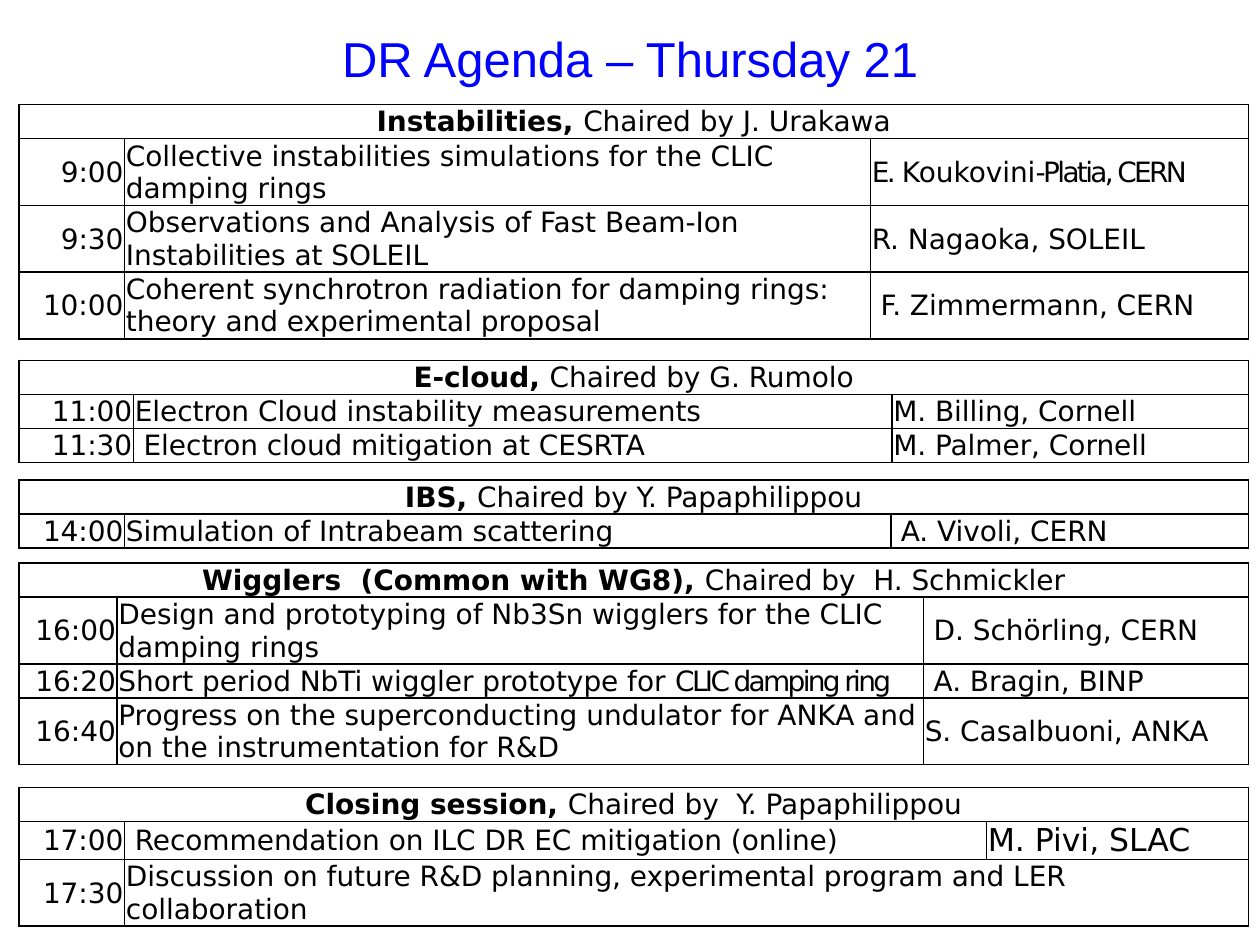
import pptx
import pptx.util
import pptx.dml.color
import pptx.enum.text
import pptx.oxml
import pptx.oxml.ns

Inch, Pt = pptx.util.Inches, pptx.util.Pt
Align = pptx.enum.text.PP_ALIGN
Middle = pptx.enum.text.MSO_ANCHOR.MIDDLE


def color(code):
    return pptx.dml.color.RGBColor.from_string(code)


def border(cell):
    """Draw a thin black line on all four sides; call before setting the fill."""
    props = cell._tc.get_or_add_tcPr()
    for side in ("lnL", "lnR", "lnT", "lnB"):
        props.append(pptx.oxml.parse_xml(
            f'<a:{side} {pptx.oxml.ns.nsdecls("a")} w="12700"><a:solidFill>'
            f'<a:srgbClr val="000000"/></a:solidFill></a:{side}>'))


# Each session: top, column widths, white fill, topic, chair, talks.
# A talk: time, title, speaker, lines of text. Text between ~ marks is tightly spaced.
agenda = [
    (0.83, (0.84, 5.92, 3), True, "Instabilities, ", "Chaired by J. Urakawa", [
        ("9:00", "Collective instabilities simulations for the CLIC damping rings",
         "~E. ~Koukovini~-Platia, CERN~", 2),
        ("9:30", "Observations and Analysis of Fast Beam-Ion Instabilities at SOLEIL",
         "R. Nagaoka, SOLEIL", 2),
        ("10:00", "Coherent synchrotron radiation for damping rings: "
         "theory and experimental proposal", " F. Zimmermann, CERN", 2)]),
    (2.86, (0.91, 6.02, 2.83), False, "E-cloud, ", "Chaired by G. Rumolo", [
        ("11:00", "Electron Cloud instability measurements", "M. Billing, Cornell", 1),
        ("11:30", " Electron cloud mitigation at CESRTA", "M. Palmer, Cornell", 1)]),
    (3.81, (0.84, 6.08, 2.84), False, "IBS, ", "Chaired by Y. Papaphilippou", [
        ("14:00", "Simulation of Intrabeam scattering", " A. Vivoli, CERN", 1)]),
    (4.47, (0.78, 6.4, 2.58), False, "Wigglers  (Common with WG8), ",
     "Chaired by  H. Schmickler", [
        ("16:00", "Design and prototyping of Nb3Sn wigglers for the CLIC damping rings",
         " D. Schörling, CERN", 2),
        ("16:20", "Short period NbTi wiggler prototype for ~CLIC damping ring~",
         " A. Bragin, BINP", 1),
        ("16:40", "Progress on the superconducting undulator for ANKA and "
         "on the instrumentation for R&D", "S. Casalbuoni, ANKA", 2)]),
    (6.25, (0.84, 6.84, 2.08), True, "Closing session, ", "Chaired by  Y. Papaphilippou", [
        ("17:00", " Recommendation on ILC DR EC mitigation (online)", "M. Pivi, SLAC", 1),
        ("17:30", "Discussion on future R&D planning, experimental program and LER "
         "collaboration", None, 2)]),
]
left, width, line = 0.15, 9.76, 0.26

deck = pptx.Presentation()
deck.slide_width, deck.slide_height = Inch(10), Inch(7.5)
slide = deck.slides.add_slide(deck.slide_layouts[5])

title = slide.shapes.title
title.left, title.top = 0, Inch(0.17)
title.width, title.height = deck.slide_width, Inch(0.58)
title.text_frame.text = "DR Agenda – Thursday 21"
title.text_frame.vertical_anchor = Middle
para = title.text_frame.paragraphs[0]
para.alignment = Align.CENTER
para.font.name, para.font.size = "Arial", Pt(28)
para.font.color.rgb = color("0000FF")

for top, cols, white, topic, chair, talks in agenda:
    highs = [line + 0.01] + [talk[3] * line + 0.01 for talk in talks]
    table = slide.shapes.add_table(len(highs), 3, Inch(left), Inch(top),
                                   Inch(width), Inch(sum(highs))).table
    table.first_row = table.horz_banding = False
    for col, wide in zip(table.columns, cols):
        col.width = Inch(wide)
    for row, high in zip(table.rows, highs):
        row.height = Inch(high)

    for cell in table.iter_cells():
        border(cell)
        if white:
            cell.fill.solid()
            cell.fill.fore_color.rgb = color("FFFFFF")
        else:
            cell.fill.background()
        cell.margin_left = cell.margin_right = cell.margin_top = Inch(0.01)
        cell.margin_bottom = 0
        cell.vertical_anchor = Middle

    head = table.cell(0, 0)
    head.merge(table.cell(0, 2))
    para = head.text_frame.paragraphs[0]
    for text, bold in ((topic, True), (chair, False)):
        run = para.add_run()
        run.text, run.font.bold = text, bold
    para.alignment = Align.CENTER
    para.font.name, para.font.size = "DejaVu Sans", Pt(16)
    para.font.color.rgb = color("000000")

    for r, talk in enumerate(talks, 1):
        for c, text in enumerate(talk[:3]):
            if text is None:
                table.cell(r, c - 1).merge(table.cell(r, c))
                continue
            para = table.cell(r, c).text_frame.paragraphs[0]
            for n, part in enumerate(text.split("~")):
                if part:
                    run = para.add_run()
                    run.text = part
                    if n % 2:
                        run.font._element.set("spc", "-150")
            para.alignment = Align.RIGHT if c == 0 else Align.LEFT
            para.font.name = "DejaVu Sans"
            para.font.size = Pt(18 if text == "M. Pivi, SLAC" else 16)
            para.font.color.rgb = color("000000")

deck.save("out.pptx")
